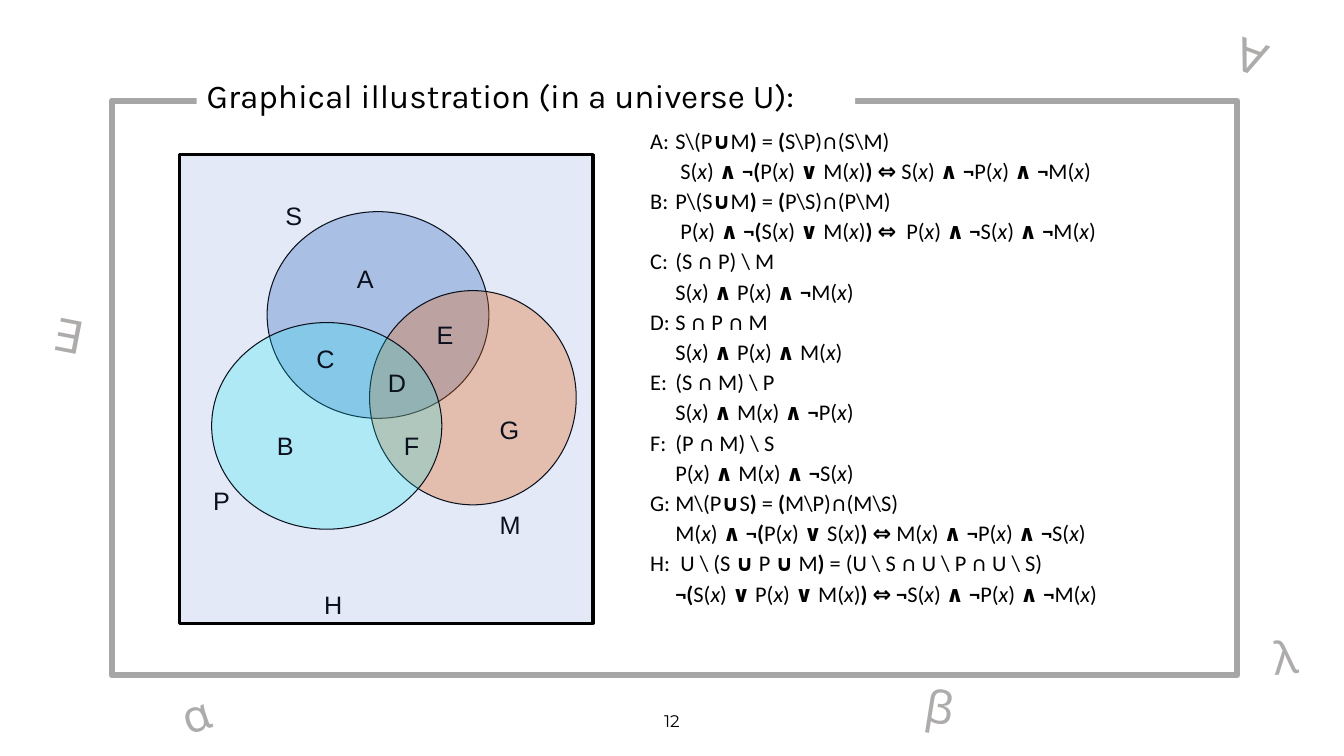
import pptx
import pptx.util
import pptx.dml.color
import pptx.enum.shapes
import pptx.enum.text
import pptx.oxml.ns
from lxml import etree

RGBColor = pptx.dml.color.RGBColor
BLACK = RGBColor(0x00, 0x00, 0x00)
WHITE = RGBColor(0xFF, 0xFF, 0xFF)
BLUE = RGBColor(0x44, 0x72, 0xC4)
ORANGE = RGBColor(0xFF, 0x66, 0x00)
CYAN = RGBColor(0x00, 0xFF, 0xFF)
FRAME_GRAY = RGBColor(0xA6, 0xA6, 0xA6)
SYMBOL_GRAY = RGBColor(0xAE, 0xAB, 0xAB)

SHAPE = pptx.enum.shapes.MSO_SHAPE
ALIGN = pptx.enum.text.PP_ALIGN
ANCHOR = pptx.enum.text.MSO_ANCHOR
Pt = pptx.util.Pt
qn = pptx.oxml.ns.qn

COLUMNS, ROWS = 160, 90

# Region, set expression, logical formula; asterisks switch bold on and off.
REGIONS = [
    ("A", r"S\(P*∪*M*) *=* (*S\P)*∩*(S\M)",
     " S(x) *∧ ¬(*P(x) *∨ *M(x)*) ⇔ *S(x) *∧ ¬*P(x) *∧ ¬*M(x)"),
    ("B", r"P\(S*∪*M*) *=* (*P\S)*∩*(P\M)",
     " P(x) *∧ ¬(*S(x) *∨ *M(x)*) ⇔ * P(x) *∧ ¬*S(x) *∧ ¬*M(x)"),
    ("C", r"(S *∩ *P) \ M", "S(x) *∧ *P(x) *∧ ¬*M(x)"),
    ("D", "S *∩* P *∩* M", "S(x) *∧ *P(x) *∧ *M(x)"),
    ("E", r"(S *∩* M) \ P", "S(x) *∧ *M(x) *∧ ¬*P(x)"),
    ("F", r"(P *∩* M) \ S", "P(x) *∧ *M(x) *∧ ¬*S(x)"),
    ("G", r"M\(P*∪*S*) *=* (*M\P)*∩*(M\S)",
     "M(x) *∧ ¬(*P(x) *∨ *S(x)*) ⇔* M(x) *∧ ¬*P(x) *∧ ¬*S(x)"),
    ("H", r" U \ (S *∪ *P *∪* M*)* = (U \ S *∩ *U \ P *∩ *U \ S)",
     "*¬(*S(x) *∨ *P(x) *∨ *M(x)*) ⇔ ¬*S(x) *∧ ¬*P(x) *∧ ¬*M(x)"),
]

# Boxes are column, row, columns wide, rows high.
CIRCLES = [
    ((31.8, 25.2, 26.4, 24.6), BLUE, 35),
    ((44, 34.6, 24.6, 25.5), ORANGE, 33),
    ((25.2, 38.4, 27.4, 24.6), CYAN, 23),
]
LABELS = {
    "S": (32.8, 23.3), "P": (24.2, 57.2), "M": (58.3, 60.1),
    "A": (41.3, 30.8), "B": (31.8, 50.6), "C": (36.5, 40.3),
    "D": (45, 43.1), "E": (50.8, 37.4), "F": (46.9, 50.6),
    "G": (58.3, 48.7), "H": (37.4, 69.6),
}
SYMBOLS = [
    ("∀", 145.9, 3.1, 20), ("∃", 5.2, 36.2, 11), ("α", 20.4, 80.9, 341),
    ("β", 109, 80.4, 9), ("λ", 150.4, 74.3, 354),
]


class SlideBuilder:
    def __init__(self, prs):
        self.col = prs.slide_width / COLUMNS
        self.row = prs.slide_height / ROWS
        self.s = prs.slides.add_slide(prs.slide_layouts[1])

    def box(self, col, row, cols, rows):
        return (round(col * self.col), round(row * self.row),
                round(cols * self.col), round(rows * self.row))

    def place(self, sp, box):
        sp.left, sp.top, sp.width, sp.height = self.box(*box)

    def style(self, r, font, size, color=BLACK):
        r.font.name = font
        r.font.size = Pt(size)
        r.font.color.rgb = color

    def title(self, box, text):
        """Put the title in front of what is drawn so far, on white."""
        sp = self.s.shapes.title
        self.place(sp, box)
        sp.element.getparent().append(sp.element)
        sp.fill.solid()
        sp.fill.fore_color.rgb = WHITE
        tf = sp.text_frame
        tf.text = text
        tf.word_wrap = True
        tf.auto_size = pptx.enum.text.MSO_AUTO_SIZE.NONE
        tf.vertical_anchor = ANCHOR.MIDDLE
        p = tf.paragraphs[0]
        p.alignment = ALIGN.LEFT
        p.line_spacing = 0.8
        self.style(p.runs[0], "Karla", 23.8)

    def body(self, box, lines):
        sp = self.s.placeholders[1]
        self.place(sp, box)
        tf = sp.text_frame
        tf.word_wrap = True
        tf.auto_size = pptx.enum.text.MSO_AUTO_SIZE.NONE
        tf.vertical_anchor = ANCHOR.TOP
        for i, line in enumerate(lines):
            p = tf.add_paragraph() if i else tf.paragraphs[0]
            p.line_spacing = 0.8
            p.space_before = Pt(6.2)
            pPr = p._p.get_or_add_pPr()
            pPr.set("marL", str(round(3 * self.col)))
            pPr.set("indent", str(-round(3 * self.col)))
            etree.SubElement(pPr, qn("a:buNone"))
            self.formula(p, line)

    def formula(self, p, line):
        """Add runs: bold between asterisks, each variable x in italics."""
        for i, part in enumerate(line.split("*")):
            for piece in part.replace("x", "*x*").split("*"):
                if piece:
                    r = p.add_run()
                    r.text = piece
                    self.style(r, "Calibri", 16)
                    r.font.bold = i % 2 == 1
                    r.font.italic = piece == "x"

    def shape(self, kind, box, line, width, fill=None, opacity=100):
        sp = self.s.shapes.add_shape(kind, *self.box(*box))
        sp.shadow.inherit = False
        sp.line.color.rgb = line
        sp.line.width = Pt(width)
        if fill is None:
            sp.fill.background()
            return
        sp.fill.solid()
        sp.fill.fore_color.rgb = fill
        clr = sp.element.spPr.find(qn("a:solidFill")).find(qn("a:srgbClr"))
        etree.SubElement(clr, qn("a:alpha"), val=str(opacity * 1000))

    def text(self, box, text, font, size, color=BLACK, align=ALIGN.LEFT,
             anchor=ANCHOR.TOP, rotation=0):
        sp = self.s.shapes.add_textbox(*self.box(*box))
        sp.rotation = rotation
        tf = sp.text_frame
        tf.text = text
        tf.word_wrap = True
        tf.vertical_anchor = anchor
        p = tf.paragraphs[0]
        p.alignment = align
        self.style(p.runs[0], font, size, color)


def main():
    prs = pptx.Presentation()
    prs.slide_width = pptx.util.Inches(13.33)
    prs.slide_height = pptx.util.Inches(7.5)
    b = SlideBuilder(prs)

    b.text((53, 83.4, 54, 4.8), "12", "Montserrat", 12,
           align=ALIGN.CENTER, anchor=ANCHOR.MIDDLE)
    lines = []
    for name, sets, logic in REGIONS:
        lines += [f"{name}:\t{sets}", f"\t{logic}"]
    b.body((76.2, 15.1, 63.8, 64.7), lines)

    for box, color, opacity in CIRCLES:
        b.shape(SHAPE.OVAL, box, BLACK, 0.75, color, opacity)
    for name, (col, row) in LABELS.items():
        b.text((col, row, 6, 4.8), name, "Arial", 18)
    b.shape(SHAPE.RECTANGLE, (21.4, 18.4, 49.2, 55.8), BLACK, 2.25, BLUE, 15)

    b.shape(SHAPE.RECTANGLE, (13.3, 12, 134, 68.4), FRAME_GRAY, 4.5)
    b.title((23.4, 8.6, 78.4, 6.4), "Graphical illustration (in a universe U):")
    for symbol, col, row, rotation in SYMBOLS:
        b.text((col, row, 7.4, 7.7), symbol, "Karla", 32, SYMBOL_GRAY,
               rotation=rotation)

    prs.save("out.pptx")


if __name__ == "__main__":
    main()
